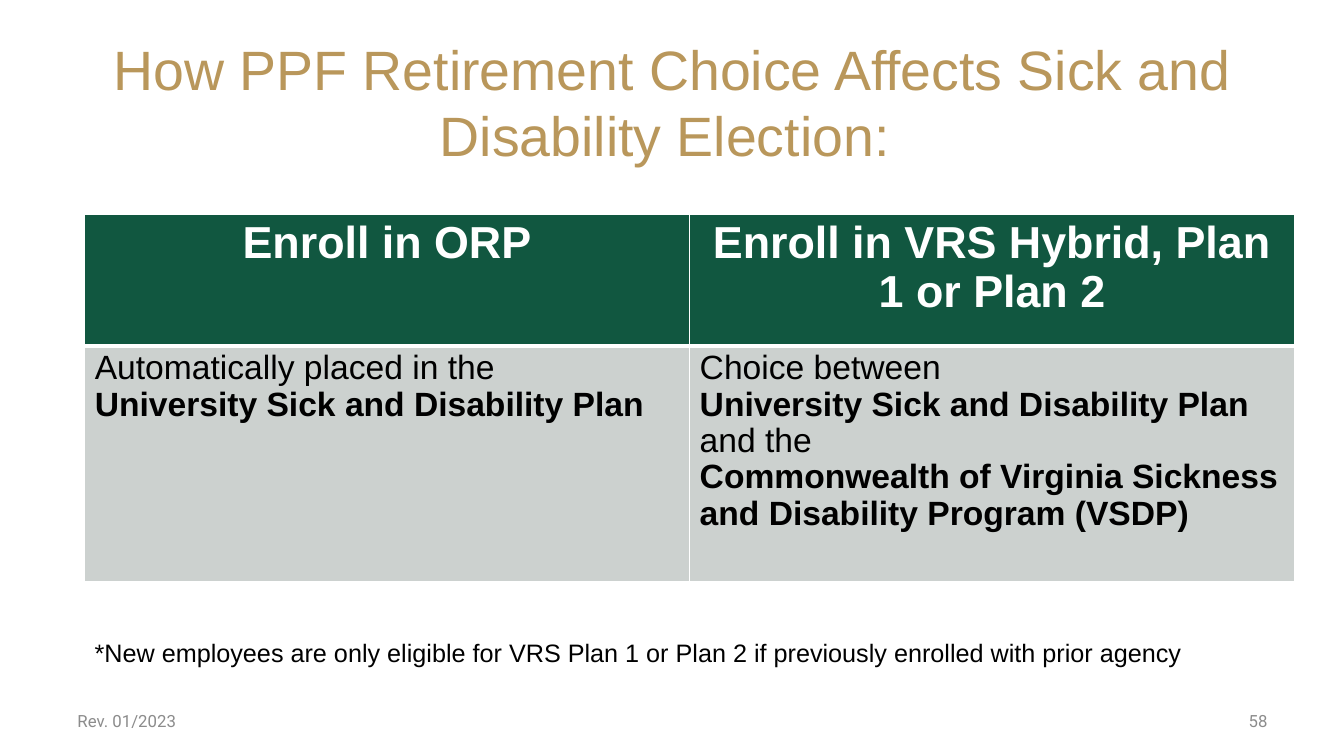
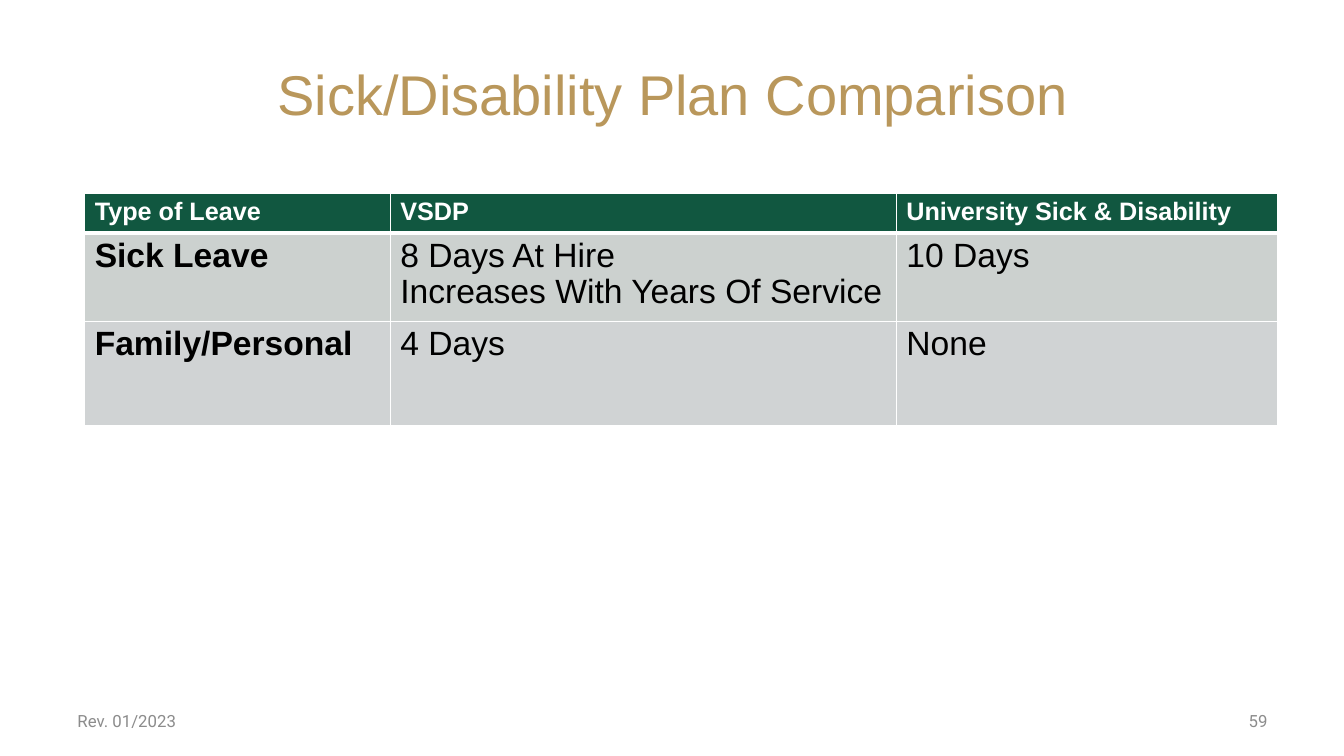
from dataclasses import dataclass

from lxml import etree
from pptx import Presentation
from pptx.dml.color import RGBColor
from pptx.enum.text import MSO_ANCHOR, PP_ALIGN
from pptx.oxml.ns import qn
from pptx.util import Inches, Pt


@dataclass(frozen=True)
class Theme:
    gold: str = "B9975B"
    green: str = "115740"
    bands: tuple = ("CCD1CF", "D0D3D4")
    white: str = "FFFFFF"
    black: str = "000000"
    grey: str = "8C8C8C"
    font: str = "Arial"
    footer_font: str = "Roboto"
    title: float = 40
    header: float = 32
    body: float = 24
    note: float = 18
    footer: float = 12
    rule: float = 1
    header_rule: float = 3
    cell_spacing: float = 0.97


THEME = Theme()
LEFT, CENTER, RIGHT = PP_ALIGN.LEFT, PP_ALIGN.CENTER, PP_ALIGN.RIGHT


def write(tf, paragraphs, size, color=THEME.black, font=THEME.font,
          bold=False, align=LEFT, spacing=None):
    for i, runs in enumerate(paragraphs):
        p = tf.add_paragraph() if i else tf.paragraphs[0]
        p.alignment = align
        if spacing:
            p.line_spacing = spacing
        for run in [runs] if isinstance(runs, str) else runs:
            text, run_bold = (run, bold) if isinstance(run, str) else run
            r = p.add_run()
            r.text = text
            r.font.name = font
            r.font.size = Pt(size)
            r.font.bold = run_bold
            r.font.color.rgb = RGBColor.from_string(color)


def add_text(slide, box, text, anchor=MSO_ANCHOR.MIDDLE, **style):
    tf = slide.shapes.add_textbox(*map(Inches, box)).text_frame
    tf.word_wrap = True
    tf.vertical_anchor = anchor
    write(tf, [text], **style)


def add_title(slide, box, text, size=THEME.title):
    add_text(slide, box, text, size=size, color=THEME.gold, align=CENTER)


def add_footer(slide, number, box=(0.67, 6.95, 12, 0.4)):
    left, top, width, height = box
    part = 3.11
    style = dict(size=THEME.footer, color=THEME.grey, font=THEME.footer_font)
    add_text(slide, (left, top, part, height), "Rev. 01/2023", **style)
    add_text(slide, (left + width - part, top, part, height), str(number),
             align=RIGHT, **style)


def set_borders(cell, **widths):
    tc_pr = cell._tc.get_or_add_tcPr()
    for side in "LRTB":
        width = Pt(widths.get(side, THEME.rule))
        ln = etree.SubElement(tc_pr, qn(f"a:ln{side}"), w=str(width))
        fill = etree.SubElement(ln, qn("a:solidFill"))
        etree.SubElement(fill, qn("a:srgbClr"), val=THEME.white)


def add_plan_table(slide, origin, cols, heights, rows, header_size,
                   header_align=LEFT, bold_first=False):
    frame = slide.shapes.add_table(len(rows), len(cols), *map(
        Inches, (*origin, sum(cols), sum(heights))))
    table = frame.table
    for col, width in zip(table.columns, cols):
        col.width = Inches(width)
    for i, (height, row) in enumerate(zip(heights, rows)):
        table.rows[i].height = Inches(height)
        for j, paragraphs in enumerate(row):
            cell = table.cell(i, j)
            if i == 0:
                set_borders(cell, B=THEME.header_rule)
                fill = THEME.green
                style = dict(size=header_size, color=THEME.white, bold=True,
                             align=header_align)
            else:
                set_borders(cell, T=THEME.header_rule if i == 1 else THEME.rule)
                fill = THEME.bands[(i - 1) % 2]
                style = dict(size=THEME.body, bold=bold_first and j == 0)
            cell.fill.solid()
            cell.fill.fore_color.rgb = RGBColor.from_string(fill)
            write(cell.text_frame, paragraphs, spacing=THEME.cell_spacing, **style)


def build_election(slide):
    plan = ("University Sick and Disability Plan", True)
    vsdp = ("Commonwealth of Virginia Sickness and Disability Program (VSDP)", True)
    add_title(slide, (0.67, 0.38, 12, 1.25),
              "How PPF Retirement Choice Affects Sick and Disability Election: ",
              size=39.6)
    add_plan_table(slide, (0.84, 2.13), [6, 6], [1.3, 2.34], [
        [["Enroll in ORP"], ["Enroll in VRS Hybrid, Plan 1 or Plan 2"]],
        [["Automatically placed in the", [plan]],
         ["Choice between", [plan, " and the"], [vsdp]]],
    ], header_size=THEME.header, header_align=CENTER)
    add_text(slide, (0.84, 6.27, 11.65, 0.4),
             "*New employees are only eligible for VRS Plan 1 or Plan 2 "
             "if previously enrolled with prior agency",
             anchor=MSO_ANCHOR.TOP, size=THEME.note)


def build_comparison(slide):
    add_title(slide, (0.67, 0.3, 12, 1.25), "Sick/Disability Plan Comparison")
    add_plan_table(slide, (0.84, 1.92), [3.03, 5.02, 3.78], [0.38, 0.84, 1.03], [
        [["Type of Leave"], ["VSDP"], ["University Sick & Disability"]],
        [["Sick Leave"],
         ["8 Days At Hire", "Increases With Years Of Service"], ["10 Days"]],
        [["Family/Personal"], ["4 Days"], ["None"]],
    ], header_size=THEME.note, bold_first=True)


def main():
    prs = Presentation()
    prs.slide_width, prs.slide_height = Inches(13.33), Inches(7.5)
    for number, build in enumerate((build_election, build_comparison), 58):
        slide = prs.slides.add_slide(prs.slide_layouts[6])
        build(slide)
        add_footer(slide, number)
    prs.save("out.pptx")


if __name__ == "__main__":
    main()
